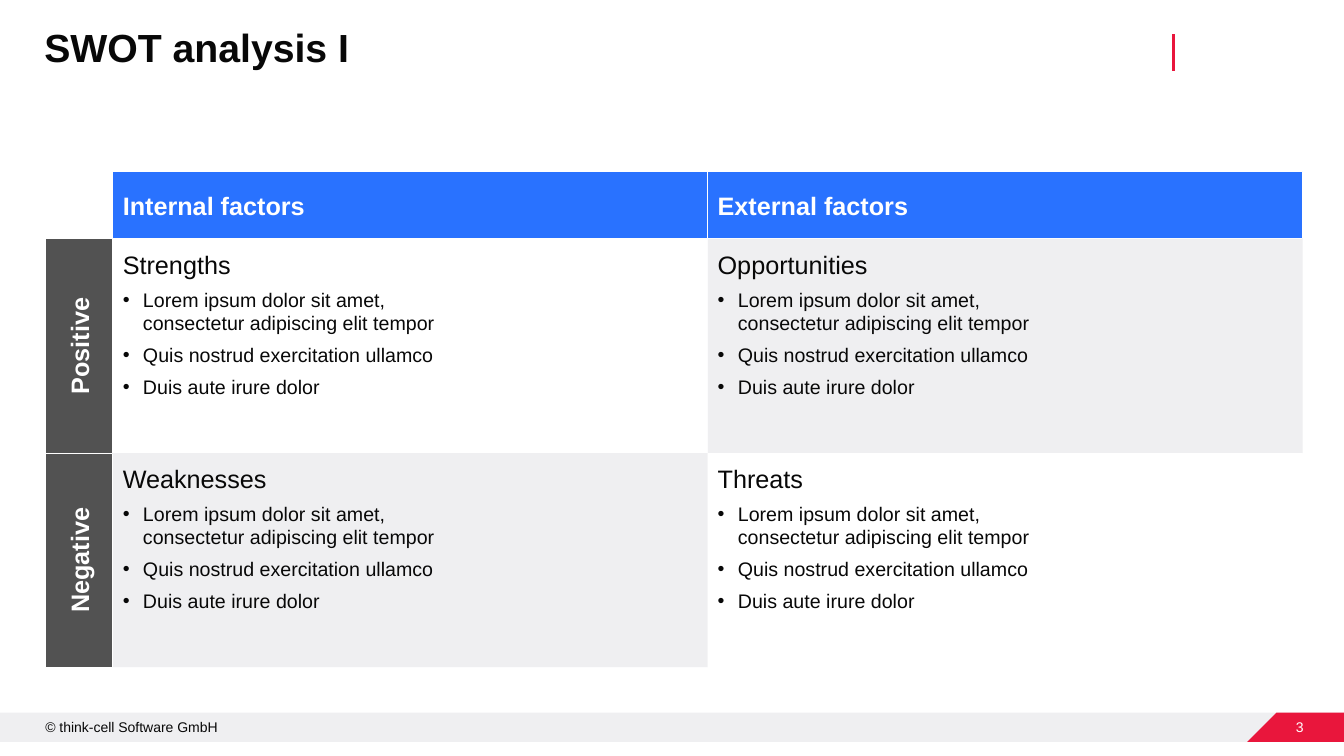
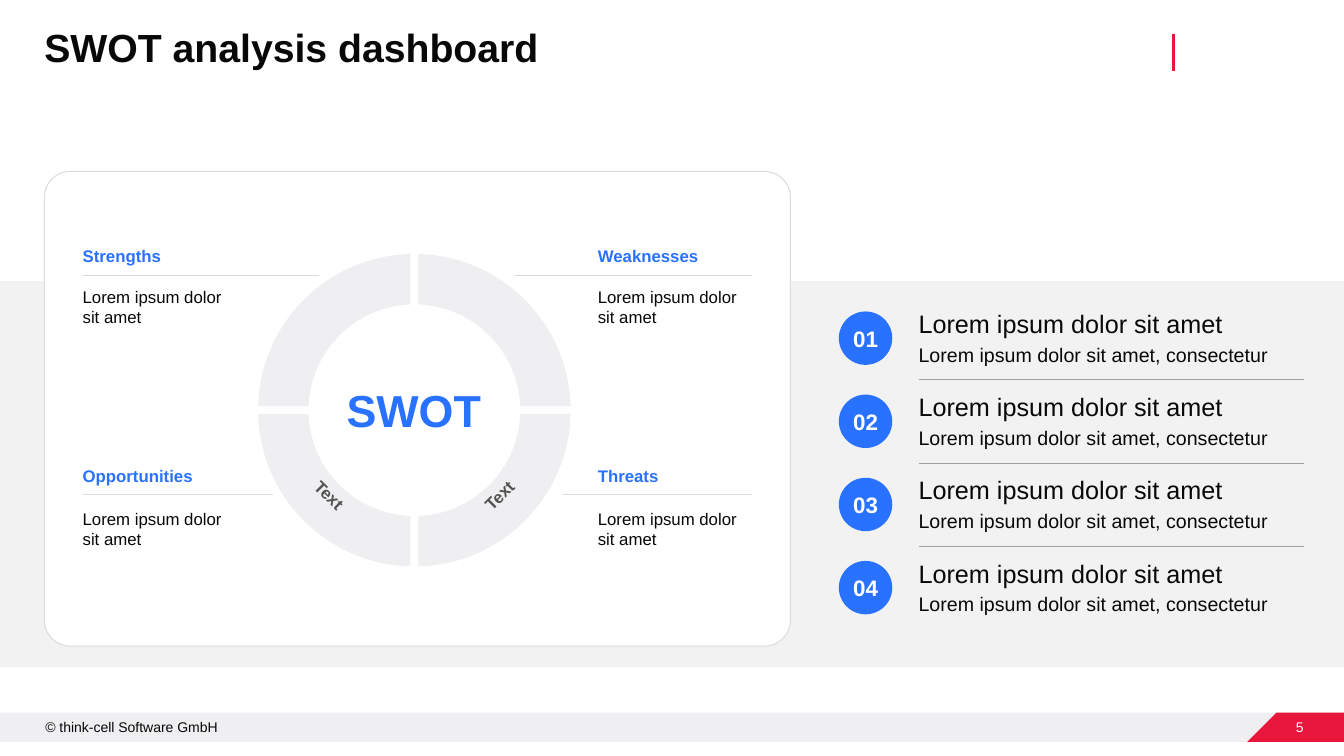
import math

from lxml import etree
from pptx import Presentation
from pptx.dml.color import RGBColor
from pptx.enum import shapes, text
from pptx.oxml.ns import qn
from pptx.util import Inches, Pt

FONT = "Arial"
INK = RGBColor(0x08, 0x08, 0x08)
WHITE = RGBColor(0xFF, 0xFF, 0xFF)
BLUE = RGBColor(0x29, 0x72, 0xFF)
RED = RGBColor(0xE9, 0x16, 0x3C)
DARK_GREY = RGBColor(0x52, 0x52, 0x52)
MID_GREY = RGBColor(0xA1, 0xA1, 0xA1)
RULE_GREY = RGBColor(0xDC, 0xDC, 0xDC)
PALE_GREY = RGBColor(0xEF, 0xEF, 0xF1)
BACKDROP_GREY = RGBColor(0xF2, 0xF2, 0xF2)

RECTANGLE = shapes.MSO_SHAPE.RECTANGLE
OVAL = shapes.MSO_SHAPE.OVAL
TOP, MIDDLE, BOTTOM = text.MSO_ANCHOR.TOP, text.MSO_ANCHOR.MIDDLE, text.MSO_ANCHOR.BOTTOM
LEFT, CENTER, RIGHT = text.PP_ALIGN.LEFT, text.PP_ALIGN.CENTER, text.PP_ALIGN.RIGHT


def paint(shape, fill, line=None):
    shape.shadow.inherit = False
    shape.fill.solid()
    shape.fill.fore_color.rgb = fill
    if line is None:
        shape.line.fill.background()
    else:
        shape.line.color.rgb = line
        shape.line.width = Pt(0.75)
    return shape


def write(shape, lines, anchor=TOP, align=LEFT, margins=(0, 0), before=0, after=0,
          bullets=False, wrap=True):
    """Write (text, size, colour, bold) lines; before and bullets skip the first one."""
    frame = shape.text_frame
    frame.auto_size = text.MSO_AUTO_SIZE.NONE
    frame.word_wrap = wrap
    frame.vertical_anchor = anchor
    frame.margin_left, frame.margin_top = map(Inches, margins)
    frame.margin_right = frame.margin_bottom = 0
    for index, (content, size, colour, bold) in enumerate(lines):
        paragraph = frame.add_paragraph() if index else frame.paragraphs[0]
        paragraph.alignment = align
        paragraph.space_before = Pt(before if index else 0)
        paragraph.space_after = Pt(after)
        if bullets and index:
            properties = paragraph._p.get_or_add_pPr()
            properties.set("marL", str(Inches(0.2)))
            properties.set("indent", str(-Inches(0.2)))
            etree.SubElement(properties, qn("a:buFont")).set("typeface", FONT)
            etree.SubElement(properties, qn("a:buChar")).set("char", "•")
        for part_index, part in enumerate(content.split("\n")):
            if part_index:
                paragraph.add_line_break()
            run = paragraph.add_run()
            run.text = part
            run.font.name = FONT
            run.font.size = Pt(size)
            run.font.bold = bold
            run.font.color.rgb = colour


presentation = Presentation()
presentation.slide_width = Inches(13.33)
presentation.slide_height = Inches(7.5)

# Titles and page numbers
layout = presentation.slide_layouts[5]
for placeholder in list(layout.placeholders)[1:]:
    layout.shapes._spTree.remove(placeholder._element)
slides = []
for title, page_number in [("SWOT analysis I", "3"), ("SWOT analysis dashboard", "5")]:
    slide = presentation.slides.add_slide(layout)
    slides.append(slide)
    heading = slide.shapes.title
    heading.left, heading.top = Inches(0.44), Inches(0.28)
    heading.width, heading.height = Inches(11.03), Inches(0.42)
    write(heading, [(title, 28, INK, True)])
    heading.text_frame.paragraphs[0].line_spacing = 0.9
    number = slide.shapes.add_textbox(Inches(12.76), Inches(7.13), Inches(0.17), Inches(0.17))
    write(number, [(page_number, 10, WHITE, False)], MIDDLE, RIGHT)
matrix_slide, dashboard = slides

# Footer, built on a slide and moved to the layout that both slides share
band = matrix_slide.shapes.add_shape(RECTANGLE, 0, Inches(7.07), Inches(13.33), Inches(0.29))
paint(band, PALE_GREY)
builder = matrix_slide.shapes.build_freeform(Inches(12.66), Inches(7.07))
builder.add_line_segments([(Inches(x), Inches(y)) for x, y in
                           [(13.33, 7.07), (13.33, 7.36), (12.37, 7.36)]])
corner = paint(builder.convert_to_shape(), RED)
notice = matrix_slide.shapes.add_textbox(Inches(0.45), Inches(7.13), Inches(2.46), Inches(0.17))
write(notice, [("© think-cell Software GmbH", 10, INK, False)])
for shape in (band, corner, notice):
    layout.shapes._spTree.append(shape._element)

# Matrix: column heads, row heads and four quadrants
COLUMN_LEFT, COLUMN_WIDTH = 1.12, 5.9
ROW_TOP, ROW_HEIGHT = 2.37, 4.25 / 2
HEAD_SIZE = 0.67
BULLETS = ["Lorem ipsum dolor sit amet, \nconsectetur adipiscing elit tempor",
           "Quis nostrud exercitation ullamco", "Duis aute irure dolor"]

for column, label in enumerate(["Internal factors", "External factors"]):
    head = matrix_slide.shapes.add_shape(
        RECTANGLE, Inches(COLUMN_LEFT + column * COLUMN_WIDTH), Inches(ROW_TOP - HEAD_SIZE),
        Inches(COLUMN_WIDTH), Inches(HEAD_SIZE))
    write(paint(head, BLUE, WHITE), [(label, 18, WHITE, True)], MIDDLE, margins=(0.1, 0))

rows = [("Positive", ["Strengths", "Opportunities"]), ("Negative", ["Weaknesses", "Threats"])]
for row, (label, quadrants) in enumerate(rows):
    top = Inches(ROW_TOP + row * ROW_HEIGHT)
    for column, name in enumerate(quadrants):
        cell = matrix_slide.shapes.add_shape(
            RECTANGLE, Inches(COLUMN_LEFT + column * COLUMN_WIDTH), top,
            Inches(COLUMN_WIDTH), Inches(ROW_HEIGHT))
        paint(cell, WHITE if row == column else PALE_GREY)
        write(cell, [(name, 18, INK, False)] + [(item, 14, INK, False) for item in BULLETS],
              margins=(0.1, 0.1), before=6, bullets=True)
    head = matrix_slide.shapes.add_shape(
        RECTANGLE, Inches(COLUMN_LEFT - HEAD_SIZE), top, Inches(HEAD_SIZE), Inches(ROW_HEIGHT))
    write(paint(head, DARK_GREY, WHITE), [(label, 18, WHITE, True)], MIDDLE, CENTER)
    head.text_frame._txBody.bodyPr.set("vert", "vert270")

# Dashboard: backdrop and card
backdrop = dashboard.shapes.add_shape(RECTANGLE, 0, Inches(2.79), Inches(13.33), Inches(3.83))
paint(backdrop, BACKDROP_GREY)
card = dashboard.shapes.add_shape(shapes.MSO_SHAPE.ROUNDED_RECTANGLE, Inches(0.44), Inches(1.7),
                                  Inches(7.4), Inches(4.71))
card.adjustments[0] = 0.055
paint(card, WHITE, RULE_GREY)

# Straight lines; the last one is the accent beside the title, moved to the layout
ITEM_PITCH = 3.3 / 4
rules = []
for index in range(3):
    y = 3.77 + index * ITEM_PITCH
    rules.append((9.11, y, 12.93, y, MID_GREY, 0.75))
for start, end, y in [(0.82, 3.16, 2.73), (5.11, 7.46, 2.73),
                      (0.82, 2.71, 4.91), (5.57, 7.46, 4.91)]:
    rules.append((start, y, end, y, RULE_GREY, 0.75))
rules.append((11.64, 0.34, 11.64, 0.7, RED, 2.25))
for x1, y1, x2, y2, colour, width in rules:
    rule = dashboard.shapes.add_connector(shapes.MSO_CONNECTOR.STRAIGHT, Inches(x1), Inches(y1),
                                          Inches(x2), Inches(y2))
    rule.line.color.rgb = colour
    rule.line.width = Pt(width)
    etree.SubElement(rule._element.spPr, qn("a:effectLst"))
layout.shapes._spTree.append(rule._element)

# Numbered list
for index in range(4):
    offset = index * ITEM_PITCH
    badge = dashboard.shapes.add_shape(OVAL, Inches(8.32), Inches(3.09 + offset),
                                       Inches(0.53), Inches(0.53))
    write(paint(badge, BLUE), [(f"{index + 1:02}", 16, WHITE, True)], MIDDLE, CENTER)
    box = dashboard.shapes.add_textbox(Inches(9.11), Inches(3.06 + offset),
                                       Inches(3.82), Inches(0.58))
    write(box, [("Lorem ipsum dolor sit amet", 18, INK, False),
                ("Lorem ipsum dolor sit amet, consectetur", 14, INK, False)], after=3)

# Ring of four segments around the centre label
CENTER_X, CENTER_Y = 4.11, 4.07
OUTER, INNER, HALF_GAP = 1.55, 1.05, 0.04

halo = dashboard.shapes.add_shape(OVAL, Inches(CENTER_X - 1.61), Inches(CENTER_Y - 1.61),
                                  Inches(3.22), Inches(3.22))
paint(halo, WHITE)

# Each arc is one Bézier curve: start, two control points, end
arcs = []
for radius in (OUTER, INNER):
    first = math.asin(HALF_GAP / radius)
    near, far = math.sqrt(radius ** 2 - HALF_GAP ** 2), HALF_GAP
    reach = 4 / 3 * math.tan((math.pi / 2 - 2 * first) / 4)
    arcs.append([(near, far), (near - reach * far, far + reach * near),
                 (far + reach * near, near - reach * far), (far, near)])
outline = arcs[0] + arcs[1][::-1]
for side_x, side_y in [(-1, 1), (-1, -1), (1, -1), (1, 1)]:
    points = [(Inches(CENTER_X + side_x * x), Inches(CENTER_Y + side_y * y)) for x, y in outline]
    builder = dashboard.shapes.build_freeform(*points[0])
    builder.add_line_segments(points[1:])
    segment = paint(builder.convert_to_shape(), PALE_GREY)
    steps = list(segment._element.iter(qn("a:lnTo")))
    for curve_steps in (steps[0:3], steps[4:7]):
        curve = etree.Element(qn("a:cubicBezTo"))
        curve_steps[0].addprevious(curve)
        for step in curve_steps:
            curve.append(step[0])
            step.getparent().remove(step)
for rotation in (45, 315):
    box = dashboard.shapes.add_textbox(Inches(CENTER_X - 1.29), Inches(CENTER_Y - 1.29),
                                       Inches(2.58), Inches(2.58))
    box.rotation = rotation
    write(box, [("Text", 12, DARK_GREY, True)], BOTTOM, CENTER)
hub = dashboard.shapes.add_shape(OVAL, Inches(3.12), Inches(3.08), Inches(1.97), Inches(1.97))
write(paint(hub, WHITE), [("SWOT", 32, BLUE, True)], MIDDLE, CENTER, wrap=False)

# Captions beside the ring
for name, left, label_top, body_top in [
        ("Strengths", 0.82, 2.44, 2.84), ("Opportunities", 0.82, 4.62, 5.05),
        ("Weaknesses", 5.93, 2.44, 2.84), ("Threats", 5.93, 4.62, 5.05)]:
    label = dashboard.shapes.add_textbox(Inches(left), Inches(label_top), Inches(1.53), Inches(0.2))
    write(label, [(name, 12, BLUE, True)], BOTTOM)
    body = dashboard.shapes.add_textbox(Inches(left), Inches(body_top), Inches(1.53), Inches(0.4))
    write(body, [("Lorem ipsum dolor sit amet", 12, INK, False)])

presentation.save("out.pptx")
